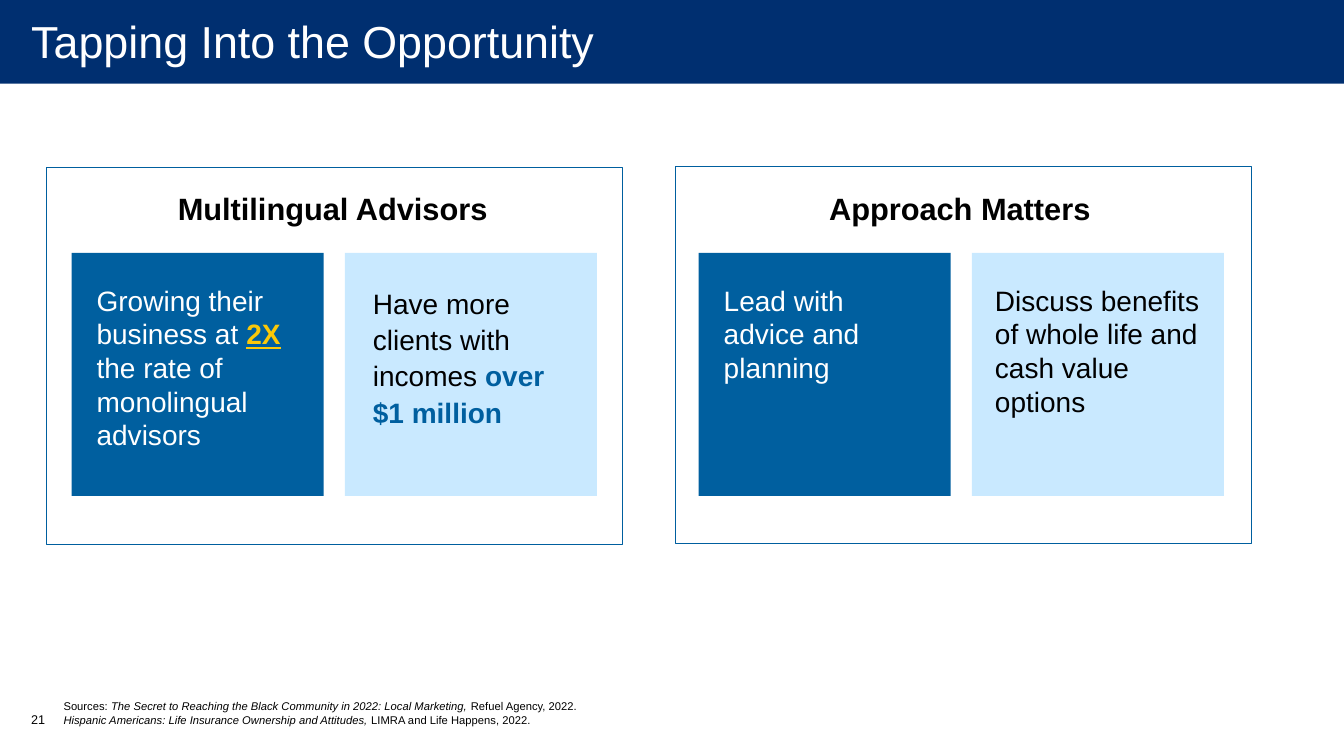
import pptx
import pptx.util
import pptx.dml.color
import pptx.enum.shapes
import pptx.enum.text
import lxml.etree

Inch = pptx.util.Inches
Pt = pptx.util.Pt
RGB = pptx.dml.color.RGBColor
Align = pptx.enum.text.PP_ALIGN
Anchor = pptx.enum.text.MSO_ANCHOR
Fit = pptx.enum.text.MSO_AUTO_SIZE

NAVY = RGB(0x00, 0x2F, 0x70)
BLUE = RGB(0x00, 0x5F, 0x9F)
PALE = RGB(0xC9, 0xE9, 0xFF)
GOLD = RGB(0xFA, 0xC8, 0x09)
WHITE = RGB(0xFF, 0xFF, 0xFF)
BLACK = RGB(0x00, 0x00, 0x00)

TITLE = "Tapping Into the Opportunity"
NUMBER = "21"
SOURCES = [
    [("Sources: ", {}),
     ("The Secret to Reaching the Black Community in 2022: Local Marketing,", {"italic": True}),
     (" Refuel Agency, 2022.", {})],
    [("Hispanic Americans: Life Insurance Ownership and Attitudes, ", {"italic": True}),
     ("LIMRA and Life Happens, 2022.", {})],
]
PANELS = [
    {"head": "Multilingual Advisors", "frame": (0.46, 1.66), "cards": [
        {"fill": BLUE, "ink": WHITE, "pad": 0.15, "lead": 24, "runs": [
            ("Growing their business at ", {}),
            ("2X", {"bold": True, "underline": True, "color": GOLD}),
            (" the rate of monolingual advisors", {})]},
        {"fill": PALE, "ink": BLACK, "pad": 0.18, "lead": 26, "runs": [
            ("Have more clients with incomes ", {}),
            ("over $1 million", {"bold": True, "color": BLUE})]}]},
    {"head": "Approach Matters", "frame": (6.7, 1.65), "cards": [
        {"fill": BLUE, "ink": WHITE, "pad": 0.15, "lead": 24, "runs": [
            ("Lead with advice and planning", {})]},
        {"fill": PALE, "ink": BLACK, "pad": 0.13, "lead": 24, "runs": [
            ("Discuss benefits of whole life and cash value options", {})]}]},
]

WIDE, HIGH = 13.33, 7.5
LEFT, STEP = 0.71, 6.22
CARD_W, CARD_H, GAP = 2.5, 2.41, 0.21
CARD_TOP, TEXT_TOP = 2.51, 2.81

deck = pptx.Presentation()
deck.slide_width, deck.slide_height = Inch(WIDE), Inch(HIGH)
slide = deck.slides.add_slide(deck.slide_layouts[1])
shapes = slide.shapes


def place(item, x, y, w, h):
    names = ("left", "top", "width", "height")
    for name, size in zip(names, (x, y, w, h)):
        setattr(item, name, Inch(size))


def block(x, y, w, h, fill=None, line=None):
    rect = shapes.add_shape(pptx.enum.shapes.MSO_SHAPE.RECTANGLE,
                            Inch(x), Inch(y), Inch(w), Inch(h))
    rect.shadow.inherit = False
    if fill is None:
        rect.fill.background()
    else:
        rect.fill.solid()
        rect.fill.fore_color.rgb = fill
    if line is None:
        rect.line.fill.background()
    else:
        rect.line.color.rgb = line
        rect.line.width = Pt(0.75)
    return rect


def write(item, lines, size, ink, frame={}, para={}):
    text = item.text_frame
    base = {"word_wrap": True, "auto_size": Fit.NONE}
    for name, value in {**base, **frame}.items():
        setattr(text, name, value)
    for i, runs in enumerate(lines):
        p = text.add_paragraph() if i else text.paragraphs[0]
        if item.is_placeholder and item != shapes.title:
            props = p._p.get_or_add_pPr()
            props.set("marL", "0")
            props.set("indent", "0")
            lxml.etree.SubElement(props, pptx.oxml.ns.qn("a:buNone"))
        for name, value in para.items():
            setattr(p, name, value)
        for words, style in runs:
            run = p.add_run()
            run.text = words
            look = {"name": "Arial", "size": Pt(size), **style}
            run.font.color.rgb = look.pop("color", ink)
            for name, value in look.items():
                setattr(run.font, name, value)


def label(x, y, w, h, *args):
    box = shapes.add_textbox(Inch(x), Inch(y), Inch(w), Inch(h))
    write(box, *args)


bar = block(0, -0.03, WIDE, 0.86, NAVY)
shapes._spTree.insert(2, bar._element)

place(shapes.title, 0.01, -0.08, WIDE, 0.97)
write(shapes.title, [[(TITLE, {})]], 32, WHITE,
      {"vertical_anchor": Anchor.MIDDLE, "margin_left": Inch(0.3),
       "margin_right": Inch(0.2), "margin_top": 0, "margin_bottom": 0},
      {"alignment": Align.LEFT})

notes = slide.placeholders[1]
place(notes, 0.53, 6.87, 5.85, 0.39)
write(notes, SOURCES, 8, BLACK, {"vertical_anchor": Anchor.BOTTOM},
      {"space_before": Pt(0), "line_spacing": Pt(10)})

for col, panel in enumerate(PANELS):
    edge = LEFT + col * STEP
    block(*panel["frame"], 5.71, 3.74, line=BLUE)
    label(edge - 0.08, 1.83, 5.34, 0.47,
          [[(panel["head"], {"bold": True})]], 22, BLACK,
          {}, {"alignment": Align.CENTER})
    for n, card in enumerate(panel["cards"]):
        x = edge + n * (CARD_W + GAP)
        block(x, CARD_TOP, CARD_W, CARD_H, card["fill"])
        label(x + card["pad"], TEXT_TOP, 2.26, 1.81, [card["runs"]], 20, card["ink"],
              {"margin_top": 0, "margin_bottom": 0},
              {"line_spacing": Pt(card["lead"]), "space_after": Pt(18)})

label(0.21, 7.01, 0.49, 0.4, [[(NUMBER, {})]], 9, BLACK)

deck.save("out.pptx")
